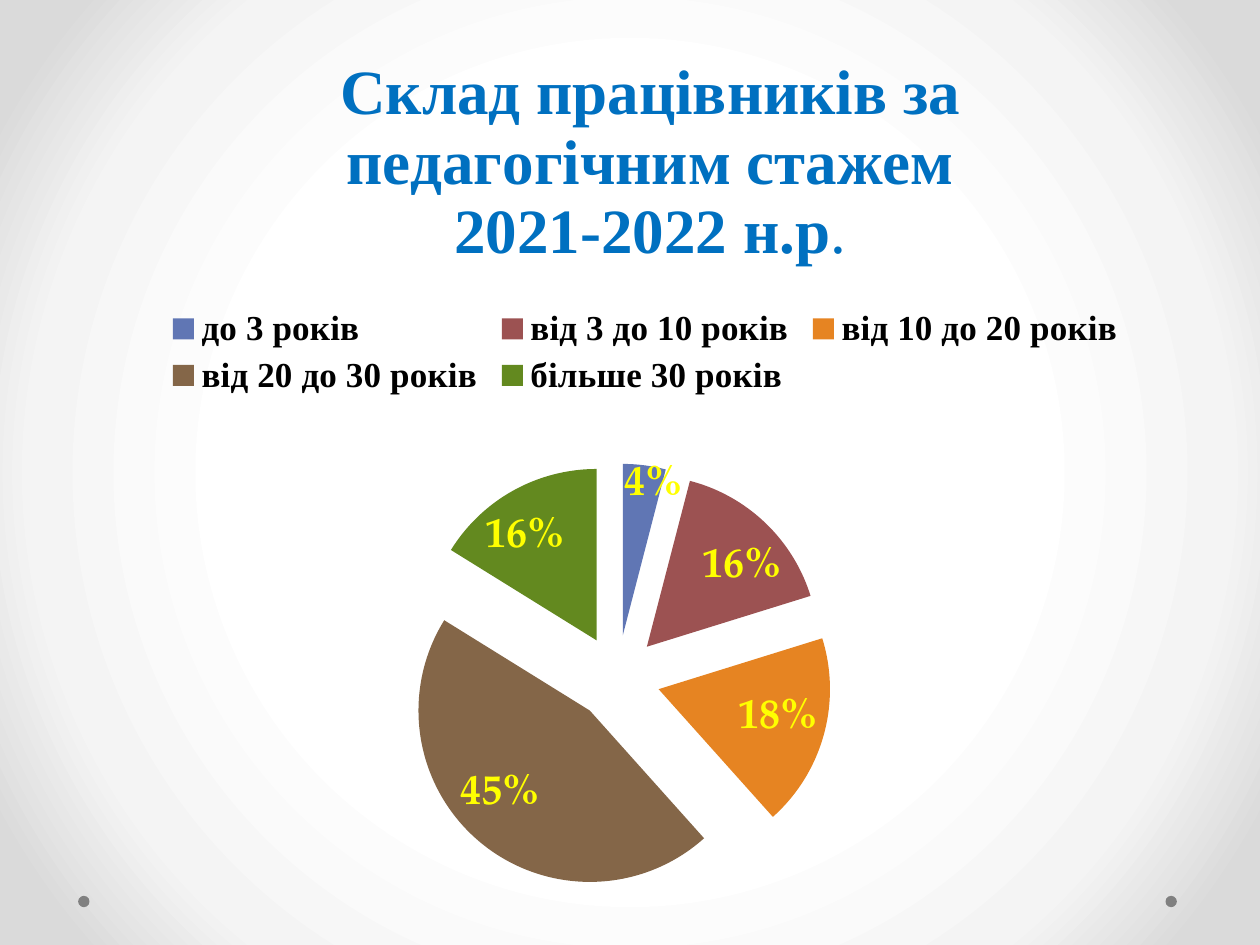
from copy import deepcopy
from dataclasses import dataclass
from typing import Optional

from lxml import etree
from pptx import Presentation
from pptx.chart.data import CategoryChartData
from pptx.dml.color import RGBColor
from pptx.enum.chart import XL_CHART_TYPE as ChartType
from pptx.enum.chart import XL_LABEL_POSITION as LabelPosition
from pptx.enum.chart import XL_LEGEND_POSITION as LegendPosition
from pptx.enum.shapes import MSO_SHAPE as Shape
from pptx.oxml import parse_xml
from pptx.oxml.ns import nsdecls, qn
from pptx.util import Inches, Pt


@dataclass(frozen=True)
class Theme:
    heading_font: str = "Times New Roman"
    body_font: str = "TeX Gyre Pagella"
    title: str = "0070C0"
    text: str = "000000"
    label: str = "FFFF00"
    dot: str = "808080"
    title_size: int = 36
    label_size: int = 24
    legend_size: int = 20
    base_size: int = 10
    backdrop: tuple = ((50, "FFFFFF"), (76, "F4F4F4"), (92, "DADADA"))


@dataclass(frozen=True)
class Slice:
    """A pie slice; the shifts move its label, in inches."""
    name: str
    percent: int
    color: str
    shift_x: float
    shift_y: float


@dataclass(frozen=True)
class Dot:
    left: float
    top: float = 7.11
    size: float = 0.09


@dataclass(frozen=True)
class Area:
    """A place on the slide, in inches."""
    left: float
    top: float
    width: Optional[float] = None
    height: Optional[float] = None


THEME = Theme()
SLICES = (
    Slice("до 3 років", 4, "6076B4", 0.31, -0.06),
    Slice("від 3 до 10 років", 16, "9C5252", 0.17, 0.15),
    Slice("від 10 до 20 років", 18, "E68422", 0.01, 0.05),
    Slice("від 20 до 30 років", 45, "846648", -0.19, -0.17),
    Slice("більше 30 років", 16, "63891F", -0.25, 0.16),
)
DOTS = (Dot(0.62), Dot(9.25))
TITLE_LINES = ("Склад працівників за педагогічним стажем", "2021-2022 н.р")
EXPLOSION = 25
CHART = Area(0.59, 0.36, 9.06, 6.85)
TITLE = Area(2.67, 0.41)
LEGEND = Area(1.27, 2.4, 7.7, 0.79)
PIE = Area(3.2, 3.68, 3.4, 3.4)


def style_font(font, size: int, color: str, name: str, bold: bool = False) -> None:
    font.size = Pt(size)
    font.bold = bold
    font.name = name
    font.color.rgb = RGBColor.from_string(color)


def layout_xml(settings: dict):
    values = "".join(f'<c:{name} val="{value}"/>' for name, value in settings.items())
    return parse_xml(
        f'<c:layout {nsdecls("c")}><c:manualLayout>{values}</c:manualLayout></c:layout>'
    )


def place(parent, area: Area, after: Optional[str] = None) -> None:
    """Give a chart part a fixed place, as shares of the chart."""
    for old in parent.findall(qn("c:layout")):
        parent.remove(old)
    settings = {"layoutTarget": "inner"} if after is None else {}
    settings.update(xMode="edge", yMode="edge")
    settings["x"] = round((area.left - CHART.left) / CHART.width, 4)
    settings["y"] = round((area.top - CHART.top) / CHART.height, 4)
    if area.width and area.height:
        settings["w"] = round(area.width / CHART.width, 4)
        settings["h"] = round(area.height / CHART.height, 4)
    layout = layout_xml(settings)
    if after is None:
        parent.insert(0, layout)
    else:
        parent.find(qn(after)).addnext(layout)


def paint_background(slide) -> None:
    """Fill the slide with a gradient that darkens towards the corners."""
    stops = "".join(
        f'<a:gs pos="{position * 1000}"><a:srgbClr val="{color}"/></a:gs>'
        for position, color in THEME.backdrop
    )
    gradient = parse_xml(
        f'<a:gradFill {nsdecls("a")} rotWithShape="1"><a:gsLst>{stops}</a:gsLst>'
        '<a:path path="circle"><a:fillToRect l="50000" t="50000" r="50000" b="50000"/>'
        "</a:path></a:gradFill>"
    )
    slide.background.fill.solid()
    solid = slide.element.find(".//" + qn("p:bgPr")).find(qn("a:solidFill"))
    solid.getparent().replace(solid, gradient)


def draw_dot(slide, dot: Dot) -> None:
    shape = slide.shapes.add_shape(
        Shape.OVAL, Inches(dot.left), Inches(dot.top), Inches(dot.size), Inches(dot.size)
    )
    shape.shadow.inherit = False
    shape.fill.solid()
    shape.fill.fore_color.rgb = RGBColor.from_string(THEME.dot)
    shape.line.fill.background()


def set_title(chart) -> None:
    frame = chart.chart_title.text_frame
    frame.text = "\n".join(TITLE_LINES)
    for para in frame.paragraphs:
        for styled in (para, *para.runs):
            style_font(styled.font, THEME.title_size, THEME.title, THEME.heading_font, True)
    period = frame.paragraphs[-1].add_run()
    period.text = "."
    style_font(period.font, THEME.title_size, THEME.title, THEME.heading_font)
    chart.chart_title.include_in_layout = False
    place(chart.chart_title._element, TITLE, after="c:tx")


def explode(sibling) -> None:
    """Pull slices out, placing the setting right before the given sibling."""
    sibling.addprevious(etree.Element(qn("c:explosion"), val=str(EXPLOSION)))


def shift_labels(labels) -> None:
    """Move each slice's label by its own distance."""
    shared = [child for child in labels if child.tag != qn("c:showLeaderLines")]
    for index, part in enumerate(SLICES):
        label = parse_xml(f'<c:dLbl {nsdecls("c")}><c:idx val="{index}"/></c:dLbl>')
        label.append(layout_xml({
            "x": round(part.shift_x / CHART.width, 4),
            "y": round(part.shift_y / CHART.height, 4),
        }))
        label.extend(deepcopy(shared))
        labels.insert(index, label)


def draw_chart(slide) -> None:
    data = CategoryChartData()
    data.categories = [part.name for part in SLICES]
    data.add_series("Series 1", [part.percent for part in SLICES])
    chart = slide.shapes.add_chart(
        ChartType.PIE, Inches(CHART.left), Inches(CHART.top),
        Inches(CHART.width), Inches(CHART.height), data,
    ).chart
    style_font(chart.font, THEME.base_size, THEME.text, THEME.body_font)
    set_title(chart)

    # Legend
    chart.has_legend = True
    chart.legend.position = LegendPosition.TOP
    chart.legend.include_in_layout = False
    style_font(chart.legend.font, THEME.legend_size, THEME.text, THEME.heading_font, True)
    place(chart.legend._element, LEGEND, after="c:legendPos")

    # Slices
    plot = chart.plots[0]
    plot.vary_by_categories = True
    place(plot._element.getparent(), PIE)
    series = plot.series[0]
    for index, part in enumerate(SLICES):
        fill = series.points[index].format.fill
        fill.solid()
        fill.fore_color.rgb = RGBColor.from_string(part.color)
    points = series._element.findall(qn("c:dPt"))
    explode(points[0])
    for point in points:
        explode(point.find(qn("c:spPr")))

    # Percentages
    labels = series.data_labels
    labels.show_percentage = True
    labels.show_value = False
    labels.number_format = "0%"
    labels.number_format_is_linked = False
    labels.position = LabelPosition.INSIDE_END
    style_font(labels.font, THEME.label_size, THEME.label, THEME.body_font, True)
    shift_labels(labels._element)


def main() -> None:
    deck = Presentation()
    deck.slide_width, deck.slide_height = Inches(10), Inches(7.5)
    page = deck.slides.add_slide(deck.slide_layouts[6])
    paint_background(page)
    for dot in DOTS:
        draw_dot(page, dot)
    draw_chart(page)
    deck.save("out.pptx")


if __name__ == "__main__":
    main()
